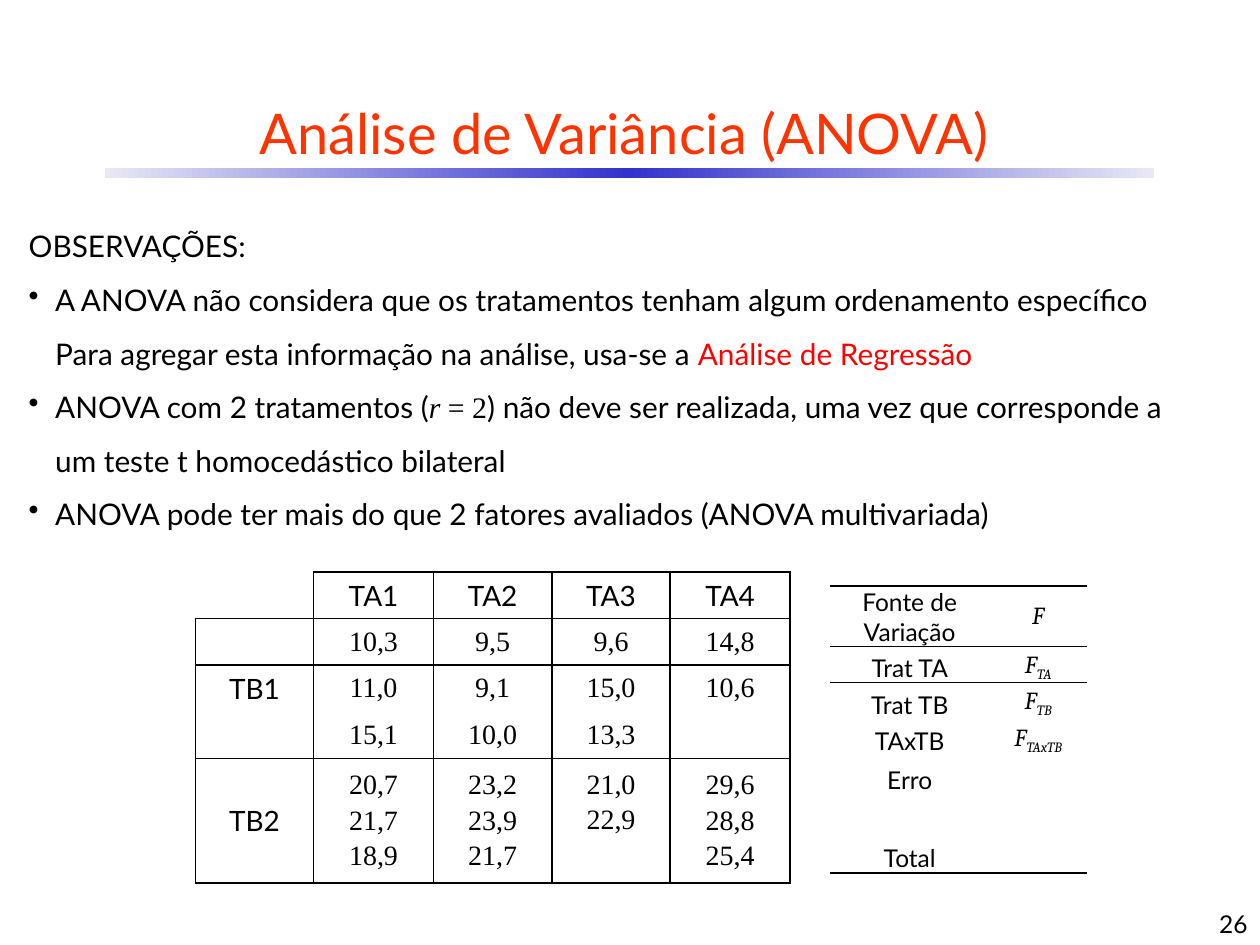
"""Build a slide with remarks on ANOVA, a two-factor data table and its F statistics."""
from copy import deepcopy
from dataclasses import dataclass, field
from typing import Any

from lxml import etree
from pptx import Presentation
from pptx.dml import color as c
from pptx.enum import shapes, text
from pptx.oxml import ns
from pptx import util as u

BLACK = c.RGBColor(0x00, 0x00, 0x00)
WHITE = c.RGBColor(0xFF, 0xFF, 0xFF)
ORANGE = c.RGBColor(0xFF, 0x33, 0x00)
RED = c.RGBColor(0xFF, 0x00, 0x00)
BLUE = c.RGBColor(0x33, 0x33, 0xCC)
PALE = c.RGBColor(0xE8, 0xE8, 0xF6)

SANS, SERIF, MATH = "Lato", "Times New Roman", "Cambria"
NO_STYLE = "{2D5ABB26-0587-4C30-8999-92F81FD0307C}"
CENTER = text.PP_ALIGN.CENTER
MIDDLE, BOTTOM = text.MSO_ANCHOR.MIDDLE, text.MSO_ANCHOR.BOTTOM


@dataclass
class Run:
    text: str
    name: str = SANS
    color: c.RGBColor = BLACK
    italic: bool = False
    base: int = 0


@dataclass
class Para:
    runs: list[Run]
    fmt: dict[str, Any] = field(default_factory=dict)
    bullet: bool = False
    hang: float | None = None


@dataclass
class Cell:
    paras: list[Para]
    borders: dict[str, float]
    margins: tuple[float, float, float, float]
    anchor: Any = MIDDLE
    fill: c.RGBColor | None = None


def apply(obj: Any, values: dict[str, Any]) -> None:
    for key, value in values.items():
        setattr(obj, key, value)


def write(tf: Any, paras: list[Para], size: float) -> None:
    for i, para in enumerate(paras):
        p = tf.paragraphs[0] if i == 0 else tf.add_paragraph()
        apply(p, para.fmt)
        if para.hang is not None:
            pPr = p._p.get_or_add_pPr()
            pPr.set("marL", str(u.Inches(0.21)))
            pPr.set("indent", str(u.Inches(para.hang)))
            if para.bullet:
                etree.SubElement(pPr, ns.qn("a:buChar")).set("char", "•")
        for run in para.runs:
            if run.text == "\v":
                p.add_line_break()
                continue
            r = p.add_run()
            r.text = run.text
            apply(r.font, {"name": run.name, "size": u.Pt(size), "italic": run.italic})
            r.font.color.rgb = run.color
            if run.base:
                r.font._element.set("baseline", str(run.base * 1000))


def add_text(s: Any, box: tuple[float, ...], paras: list[Para], size: float, anchor: Any) -> None:
    tf = s.shapes.add_textbox(*map(u.Inches, box)).text_frame
    apply(tf, {"word_wrap": True, "vertical_anchor": anchor})
    write(tf, paras, size)


def add_border(tcPr: Any, side: str, width: float) -> None:
    ln = etree.SubElement(tcPr, ns.qn(f"a:ln{side}"))
    ln.set("w", str(u.Pt(width)))
    fill = etree.SubElement(ln, ns.qn("a:solidFill"))
    etree.SubElement(fill, ns.qn("a:srgbClr")).set("val", str(BLACK))


def add_table(s: Any, at: tuple[float, float], cols: list[float], rows: list[float],
              cells: list[list[Cell]], size: float) -> None:
    box = (*at, sum(cols), sum(rows))
    sp = s.shapes.add_table(len(rows), len(cols), *map(u.Inches, box))
    sp._element.xpath(".//a:tableStyleId")[0].text = NO_STYLE
    table = sp.table
    apply(table, {"first_row": False, "horz_banding": False})
    for col, width in zip(table.columns, cols):
        col.width = u.Inches(width)
    for i, height in enumerate(rows):
        table.rows[i].height = u.Inches(height)
        for j, item in enumerate(cells[i]):
            cell = table.cell(i, j)
            sides = ("left", "top", "right", "bottom")
            apply(cell, {f"margin_{k}": u.Inches(m) for k, m in zip(sides, item.margins)})
            cell.vertical_anchor = item.anchor
            for side in "LRTB":
                if side in item.borders:
                    add_border(cell._tc.get_or_add_tcPr(), side, item.borders[side])
            if item.fill is None:
                cell.fill.background()
            else:
                cell.fill.solid()
                cell.fill.fore_color.rgb = item.fill
            write(cell.text_frame, item.paras, size)


def add_rule(s: Any) -> None:
    box = (0.83, 1.33, 8.33, 0.08)
    sp = s.shapes.add_shape(shapes.MSO_SHAPE.RECTANGLE, *map(u.Inches, box))
    sp.shadow.inherit = False
    sp.line.fill.background()
    sp.fill.gradient()
    sp.fill.gradient_angle = 0
    stops = sp._element.xpath(".//a:gsLst")[0]
    stops.insert(1, deepcopy(stops[0]))
    for stop, position, color in zip(sp.fill.gradient_stops, (0, 0.5, 1), (PALE, BLUE, PALE)):
        stop.position = position
        stop.color.rgb = color


def data_cell(i: int, j: int, value: str) -> Cell:
    sides = ("LRTB", "LRT", "LR", "LRB", "LRTB")[i] if i or j else "RB"
    name = SERIF if i and j else SANS
    fmt = {"alignment": CENTER, "space_before": u.Pt(2.5)}
    lines = value.split()
    missing = 3 - len(lines) if i == 4 and j else 0
    margins = (0.1, 0.05, 0.1, 0.05 + 0.29 * missing) if lines else (0, 0, 0, 0)
    return Cell([Para([Run(line, name)], fmt) for line in lines],
                dict.fromkeys(sides, 1), margins)


def source_cell(i: int, j: int, value: str) -> Cell:
    borders = {0: {"T": 1, "B": 0.5}, 1: {"T": 0.5}, 6: {"B": 1}}.get(i, {})
    runs = [Run(value)]
    if j:
        head, _, sub = value.partition("_")
        runs = [Run(head, MATH, italic=True)]
        if sub:
            runs.append(Run(sub, MATH, italic=True, base=-25))
    paras = [Para(runs, {"alignment": CENTER})] if value else []
    return Cell(paras, borders, (0.01, 0.01, 0.01, 0), BOTTOM if i or not j else MIDDLE, WHITE)


DATA = [
    ["", "TA1", "TA2", "TA3", "TA4"],
    ["", "10,3", "9,5", "9,6", "14,8"],
    ["TB1", "11,0", "9,1", "15,0", "10,6"],
    ["", "15,1", "10,0", "13,3", ""],
    ["TB2", "20,7 21,7 18,9", "23,2 23,9 21,7", "21,0 22,9", "29,6 28,8 25,4"],
]
SOURCES = [("Fonte de Variação", "F"), ("Trat TA", "F_TA"), ("Trat TB", "F_TB"),
           ("TAxTB", "F_TAxTB"), ("Erro", ""), ("", ""), ("Total", "")]
SPACED = {"line_spacing": 1.5}
REMARKS = [
    Para([Run("OBSERVAÇÕES:")], SPACED, hang=-0.21),
    Para([Run("A ANOVA não considera que os tratamentos tenham algum ordenamento específico")],
         SPACED, True, -0.21),
    Para([Run("Para agregar esta informação na análise, usa-se a "),
          Run("Análise de Regressão", color=RED)], SPACED, hang=0),
    Para([Run("ANOVA com 2 tratamentos ("), Run("r", SERIF, italic=True), Run(" = 2", SERIF),
          Run(") não deve ser realizada, uma vez que corresponde a"), Run("\v"),
          Run("um teste t homocedástico bilateral")], SPACED, True, -0.21),
    Para([Run("ANOVA pode ter mais do que 2 fatores avaliados (ANOVA multivariada)")],
         SPACED, True, -0.21),
]


def main() -> None:
    prs = Presentation()
    apply(prs, {"slide_width": u.Inches(10), "slide_height": u.Inches(7.5)})
    s = prs.slides.add_slide(prs.slide_layouts[6])
    add_rule(s)
    title = Para([Run("Análise de Variância (ANOVA)", color=ORANGE)], {"alignment": CENTER})
    add_text(s, (0.33, 0.67, 9.25, 0.75), [title], 32, MIDDLE)
    add_text(s, (0.13, 1.62, 9.87, 2.63), REMARKS, 17, text.MSO_ANCHOR.TOP)
    data = [[data_cell(i, j, v) for j, v in enumerate(row)] for i, row in enumerate(DATA)]
    add_table(s, (1.55, 4.54), [0.94, 0.95, 0.94, 0.94, 0.95], [0.37] * 4 + [0.99], data, 16)
    number = Para([Run("26")], {"alignment": text.PP_ALIGN.RIGHT})
    add_text(s, (7.92, 7, 2.08, 0.5), [number], 14, BOTTOM)
    sources = [[source_cell(i, j, v) for j, v in enumerate(row)] for i, row in enumerate(SOURCES)]
    add_table(s, (6.59, 4.65), [1.26, 0.78], [0.48] + [0.29] * 3 + [0.3] * 3, sources, 14)
    prs.save("out.pptx")


if __name__ == "__main__":
    main()
